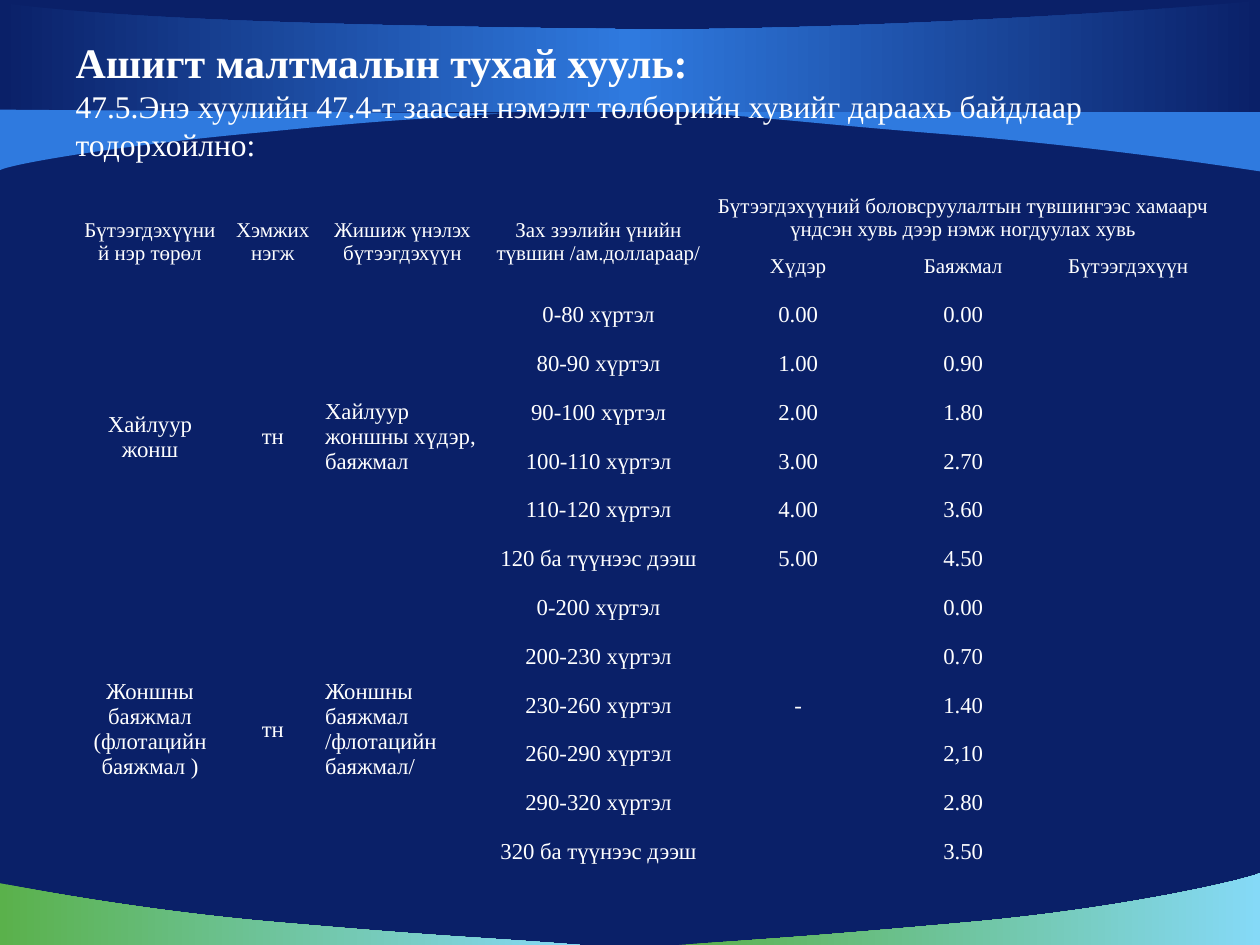
"""Builds the slide on surcharge rates for fluorspar under the minerals law."""
from copy import deepcopy
from dataclasses import dataclass

from lxml import etree
from pptx import Presentation, util as u
from pptx.dml.color import RGBColor
from pptx.enum import text
from pptx.oxml.ns import qn

Point = tuple[float, float]

COLORS = {"navy": "0A2068", "blue": "2F7ADF", "green": "5AB14B", "sky": "85D9F7", "white": "FFFFFF"}
FONT = "Times New Roman"
NO_GRID_STYLE = "{2D5ABB26-0587-4C30-8999-92F81FD0307C}"
COL_WIDTHS = [1.14, 0.81, 1.25, 1.86, 1.31, 1.31, 1.31]
ROW_COUNT, TABLE_HEIGHT = 14, 5.42
CELL_FORMAT = {
    "margin_left": u.Inches(0.01), "margin_right": u.Inches(0.01),
    "margin_top": u.Inches(0.01), "margin_bottom": 0,
    "vertical_anchor": text.MSO_ANCHOR.MIDDLE,
}


@dataclass
class Band:
    """A curved edge of joined cubic curves, closed through corner points."""
    edge: list[Point]
    corners: list[Point]
    colors: list[str]


@dataclass
class Product:
    """A product with its price levels and the rates for ore and concentrate."""
    name: str
    example: str
    levels: list[str]
    ore: list[str]
    concentrate: list[str]


BANDS = [
    Band([(4.6, 7.5), (3.84, 7.44), (3.58, 7.44), (2.32, 7.33), (1.06, 7.23), (0.01, 7.01), (0, 7.01)],
         [(0, 7.5)], ["green", "sky"]),
    Band([(5.39, 7.5), (6.14, 7.45), (6.46, 7.43), (7.69, 7.32), (8.92, 7.21), (9.9, 6.98), (10, 6.93)],
         [(10, 7.5)], ["green", "sky"]),
    Band([(5.44, 0.89), (6.2, 0.94), (6.42, 0.98), (7.68, 1.08), (8.94, 1.19), (9.99, 1.36), (10, 1.36)],
         [(10, 0.88)], ["blue"]),
    Band([(10, 0), (9.64, 0.06), (6.53, 0.26), (4.87, 0.23), (3.21, 0.21), (1.01, 0.17), (0, 0.02)],
         [(0, 0.89), (10, 0.89)], ["navy", "blue", "navy"]),
    Band([(3.98, 0.9), (3.31, 0.95), (3.18, 0.94), (2.08, 1.05), (0.97, 1.15), (0.09, 1.3), (0, 1.35)],
         [(0, 0.87)], ["blue"]),
]
TITLE_RUNS = [
    ("Ашигт малтмалын тухай хууль:", 24, True),
    ("47.5.Энэ хуулийн 47.4-т заасан нэмэлт төлбөрийн хувийг дараахь байдлаар тодорхойлно:", 18, False),
]
HEADINGS = ["Бүтээгдэхүүний нэр төрөл", "Хэмжих нэгж", "Жишиж үнэлэх бүтээгдэхүүн",
            "Зах зээлийн үнийн түвшин /ам.доллараар/"]
RATE_HEADING = "Бүтээгдэхүүний боловсруулалтын түвшингээс хамаарч үндсэн хувь дээр нэмж ногдуулах хувь"
RATE_COLUMNS = ["Хүдэр", "Баяжмал", "Бүтээгдэхүүн"]
PRODUCTS = [
    Product("Хайлуур жонш", "Хайлуур жоншны хүдэр, баяжмал",
            ["0-80 хүртэл", "80-90 хүртэл", "90-100 хүртэл", "100-110 хүртэл", "110-120 хүртэл",
             "120 ба түүнээс дээш"],
            ["0.00", "1.00", "2.00", "3.00", "4.00", "5.00"],
            ["0.00", "0.90", "1.80", "2.70", "3.60", "4.50"]),
    Product("Жоншны баяжмал (флотацийн баяжмал )", "Жоншны баяжмал /флотацийн баяжмал/",
            ["0-200 хүртэл", "200-230 хүртэл", "230-260 хүртэл", "260-290 хүртэл", "290-320 хүртэл",
             "320 ба түүнээс дээш"],
            ["", "", "-", "", "", ""],
            ["0.00", "0.70", "1.40", "2,10", "2.80", "3.50"]),
]


def rgb(name: str) -> RGBColor:
    """Returns a named colour."""
    return RGBColor.from_string(COLORS[name])


def add_run(p, words: str, size: float, bold: bool = False):
    """Adds white text to a paragraph."""
    r = p.add_run()
    r.text = words
    for key, value in {"name": FONT, "size": u.Pt(size), "bold": bold}.items():
        setattr(r.font, key, value)
    r.font.color.rgb = rgb("white")
    return r


def bend_edge(sp, edge: list[Point]) -> None:
    """Turns the first straight segments of a freeform into cubic curves."""
    segments = list(sp._element.iter(qn("a:lnTo")))
    for i, segment in enumerate(segments[:len(edge) // 3]):
        segment.tag = qn("a:cubicBezTo")
        for n, (x, y) in enumerate(edge[3 * i + 1:3 * i + 3]):
            pt = etree.Element(qn("a:pt"), x=str(u.Inches(x) - sp.left), y=str(u.Inches(y) - sp.top))
            segment.insert(n, pt)


def add_band(s, band: Band) -> None:
    """Draws one band in a solid colour or an even gradient."""
    start, *rest = [(u.Inches(x), u.Inches(y)) for x, y in band.edge[::3] + band.corners]
    builder = s.shapes.build_freeform(*start)
    builder.add_line_segments(rest, close=True)
    sp = builder.convert_to_shape()
    bend_edge(sp, band.edge)
    sp.shadow.inherit = False
    sp.line.fill.background()
    if len(band.colors) == 1:
        sp.fill.solid()
        sp.fill.fore_color.rgb = rgb(band.colors[0])
        return
    sp.fill.gradient()
    sp.fill.gradient_angle = 0
    stops = sp._element.spPr.find(qn("a:gradFill")).find(qn("a:gsLst"))
    for _ in band.colors[2:]:
        stops.append(deepcopy(stops[0]))
    for i, (stop, name) in enumerate(zip(sp.fill.gradient_stops, band.colors)):
        stop.position = i / (len(band.colors) - 1)
        stop.color.rgb = rgb(name)


def format_title(s) -> None:
    """Places the title in front of the bands and fills it."""
    sp = s.shapes.title
    s.shapes._spTree.append(sp._element)
    for key, value in zip(("left", "top", "width", "height"), (0.5, 0.25, 9.08, 1.08)):
        setattr(sp, key, u.Inches(value))
    tf = sp.text_frame
    for key, value in {"word_wrap": True, "auto_size": text.MSO_AUTO_SIZE.NONE,
                       "vertical_anchor": text.MSO_ANCHOR.MIDDLE}.items():
        setattr(tf, key, value)
    p = tf.paragraphs[0]
    p.alignment = text.PP_ALIGN.LEFT
    (law, *law_format), (clause, *clause_format) = TITLE_RUNS
    r = add_run(p, law, *law_format)
    p.add_line_break()
    p._p[-1].append(deepcopy(r._r.rPr))
    add_run(p, clause, *clause_format)


def put(table, row: int, col: int, words: str, size: float = 13, rows: int = 1, cols: int = 1,
        align=text.PP_ALIGN.CENTER) -> None:
    """Writes a cell, merging it over the given span."""
    cell = table.cell(row, col)
    if rows * cols > 1:
        cell.merge(table.cell(row + rows - 1, col + cols - 1))
    if words:
        p = cell.text_frame.paragraphs[0]
        p.alignment = align
        add_run(p, words, size)


def add_rate_table(s) -> None:
    """Adds the table of surcharge rates."""
    frame = s.shapes.add_table(ROW_COUNT, len(COL_WIDTHS), u.Inches(0.62), u.Inches(1.53),
                               u.Inches(sum(COL_WIDTHS)), u.Inches(TABLE_HEIGHT))
    table = frame.table
    table._tbl.tblPr.find(qn("a:tableStyleId")).text = NO_GRID_STYLE
    table.first_row = table.horz_banding = False
    for column, width in zip(table.columns, COL_WIDTHS):
        column.width = u.Inches(width)
    for cell in table.iter_cells():
        cell.fill.background()
        for key, value in CELL_FORMAT.items():
            setattr(cell, key, value)
    for col, words in enumerate(HEADINGS):
        put(table, 0, col, words, 12, rows=2)
    put(table, 0, 4, RATE_HEADING, 12, cols=3)
    for col, words in enumerate(RATE_COLUMNS, 4):
        put(table, 1, col, words, 12)
    top = 2
    for product in PRODUCTS:
        span = len(product.levels)
        put(table, top, 0, product.name, rows=span)
        put(table, top, 1, "тн", rows=span)
        put(table, top, 2, product.example, rows=span, align=text.PP_ALIGN.LEFT)
        for row, values in enumerate(zip(product.levels, product.ore, product.concentrate), top):
            for col, words in enumerate(values, 3):
                put(table, row, col, words)
        top += span


def main() -> None:
    """Builds and saves the slide."""
    prs = Presentation()
    prs.slide_width, prs.slide_height = u.Inches(10), u.Inches(7.5)
    s = prs.slides.add_slide(prs.slide_layouts[5])
    s.background.fill.solid()
    s.background.fill.fore_color.rgb = rgb("navy")
    for band in BANDS:
        add_band(s, band)
    format_title(s)
    add_rate_table(s)
    prs.save("out.pptx")


if __name__ == "__main__":
    main()
